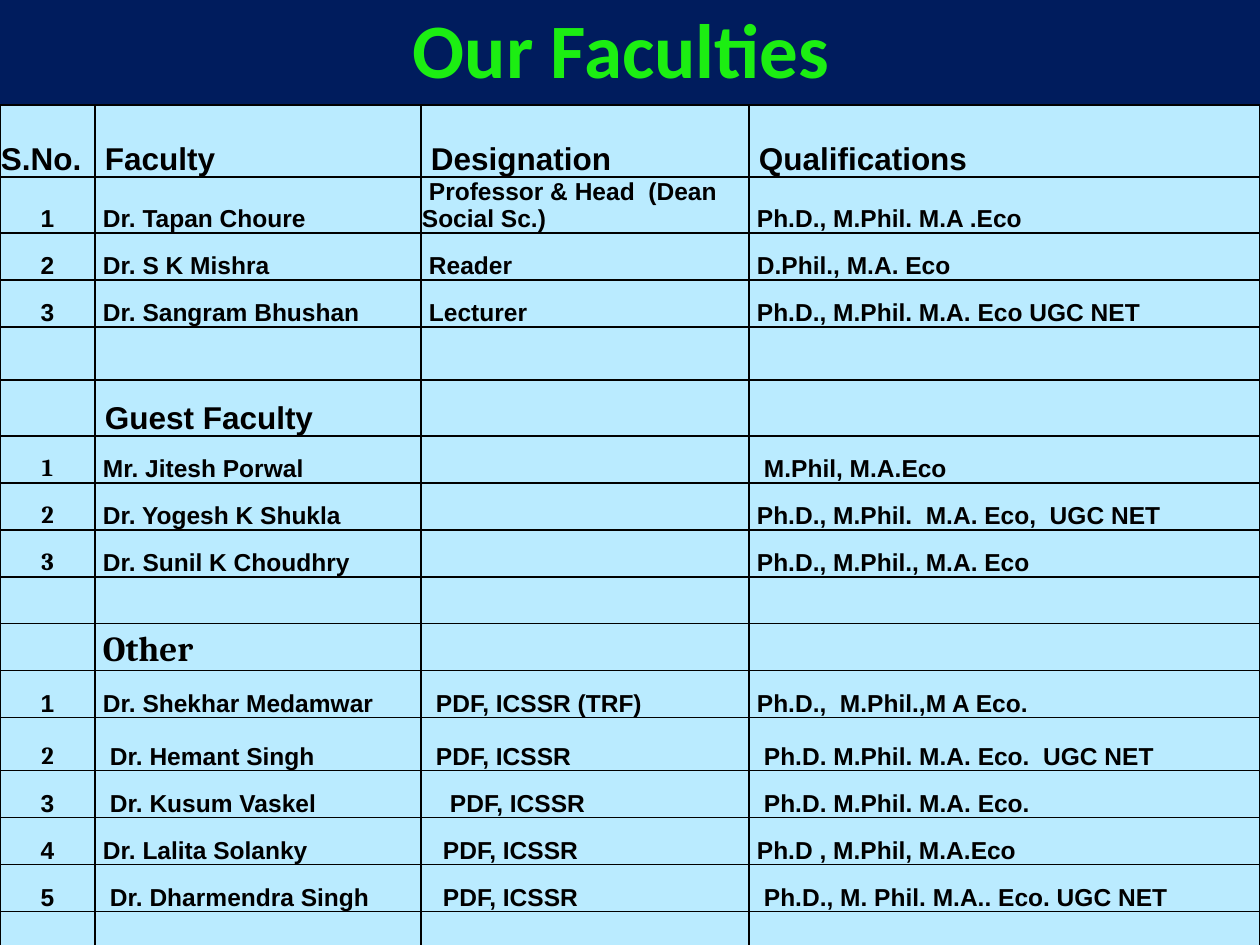
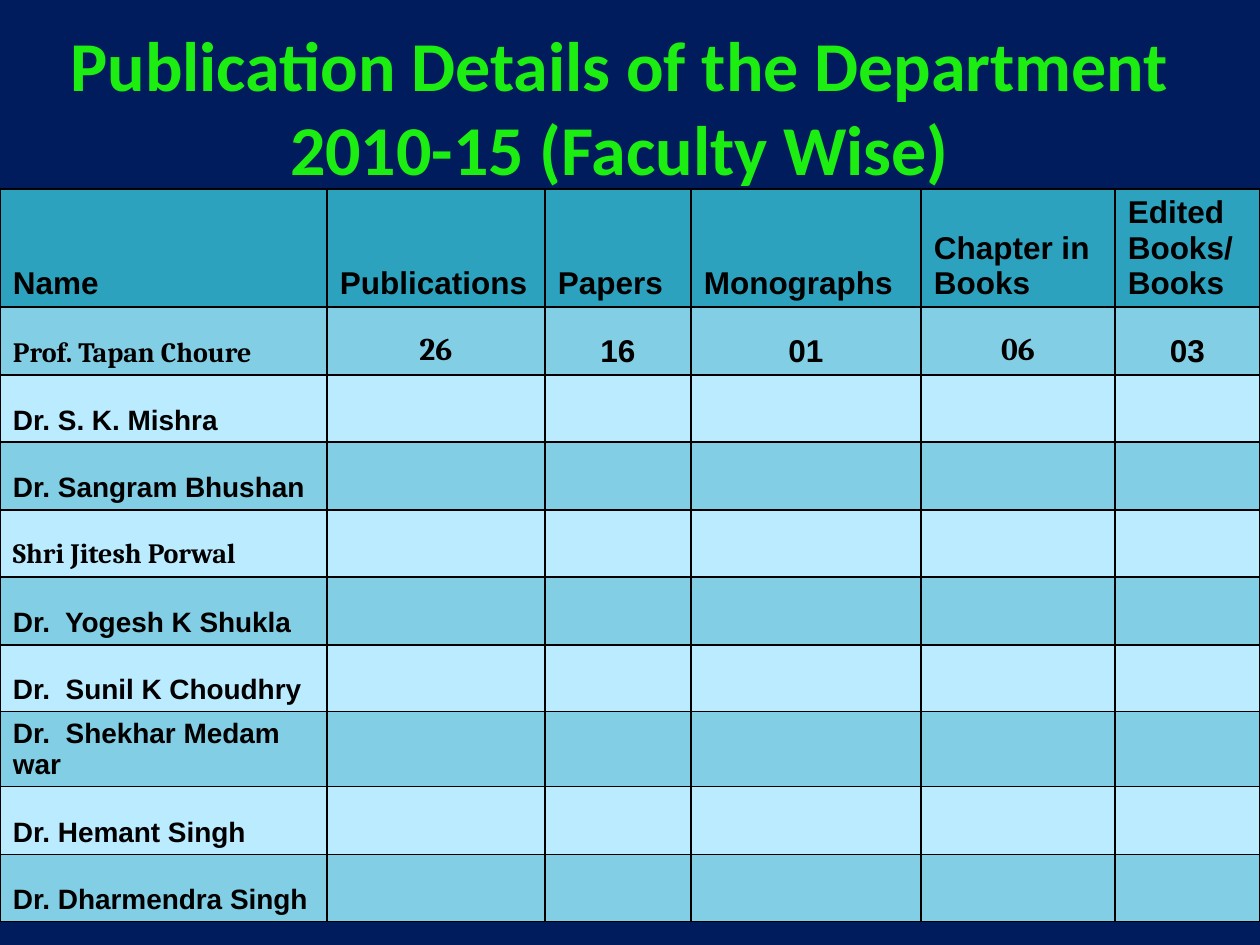
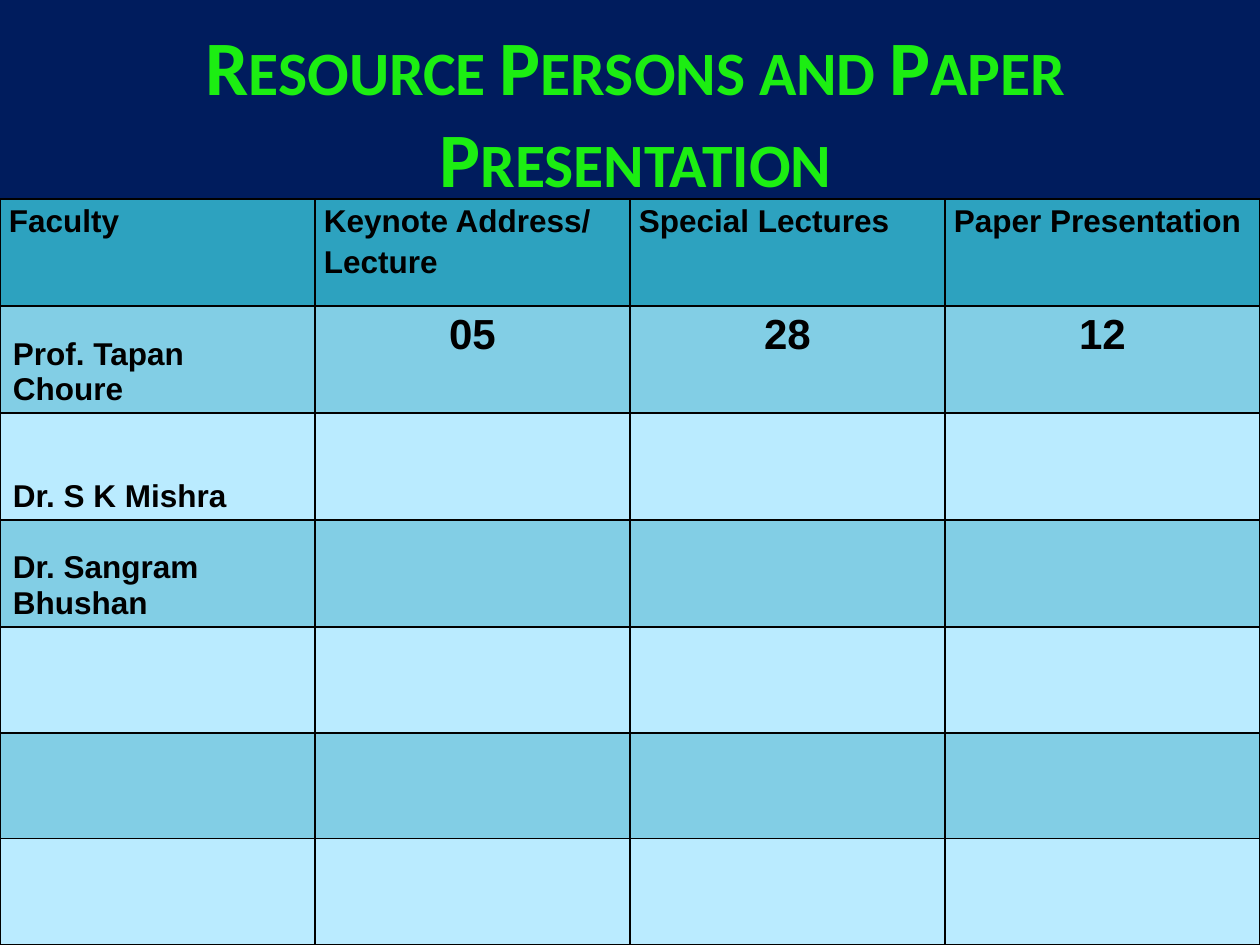
"""Build three slides of department tables: faculties, publications and presentations."""
from dataclasses import dataclass

from lxml import etree
from pptx import Presentation
from pptx import util as u
from pptx.dml.color import RGBColor
from pptx.enum import text
from pptx.oxml import ns

NAVY, GREEN, BLACK = "001C5D", "1CEE12", "000000"
HEADER, BAND, PALE = "2DA2BF", "82CEE5", "BAEBFF"
WIDTH, HEIGHT = 1260, 945


def px(length):
    return u.Emu(round(length * 914400 / 126))


def color(value):
    return RGBColor.from_string(value)


@dataclass
class Look:
    size: int
    font: str = "Arial"
    centred: bool = False
    bottom: bool = True
    indent: int = 0
    spacing: float = 1.0
    margins: tuple = (13, 6)


class Deck:
    def __init__(self):
        self.presentation = Presentation()
        self.presentation.slide_width = px(WIDTH)
        self.presentation.slide_height = px(HEIGHT)
        self.slide = None

    def add_slide(self):
        self.slide = self.presentation.slides.add_slide(self.presentation.slide_layouts[5])
        fill = self.slide.background.fill
        fill.solid()
        fill.fore_color.rgb = color(NAVY)

    def add_run(self, paragraph, words, size, font, tint):
        run = paragraph.add_run()
        run.text = words
        run.font.size = u.Pt(size)
        run.font.name = font
        run.font.bold = True
        run.font.color.rgb = color(tint)
        return run

    def title(self, words, left, top, width, height, size=44, small_caps=False):
        shape = self.slide.shapes.title
        shape.left, shape.top, shape.width, shape.height = map(px, (left, top, width, height))
        frame = shape.text_frame
        frame.word_wrap = True
        frame.auto_size = text.MSO_AUTO_SIZE.NONE
        frame.vertical_anchor = text.MSO_ANCHOR.MIDDLE
        paragraph = frame.paragraphs[0]
        paragraph.alignment = text.PP_ALIGN.CENTER
        run = self.add_run(paragraph, words, size, "Calibri", GREEN)
        if small_caps:
            run.font._element.set("cap", "small")

    def border(self, cell):
        properties = cell._tc.get_or_add_tcPr()
        for side in ("lnL", "lnR", "lnT", "lnB"):
            line = etree.SubElement(properties, ns.qn("a:" + side), w=str(u.Pt(1)))
            fill = etree.SubElement(line, ns.qn("a:solidFill"))
            etree.SubElement(fill, ns.qn("a:srgbClr"), val=BLACK)

    def fill_cell(self, cell, words, look, shade):
        self.border(cell)
        cell.fill.solid()
        cell.fill.fore_color.rgb = color(shade)
        side, edge = look.margins
        cell.margin_left = cell.margin_right = px(side)
        cell.margin_top = cell.margin_bottom = px(edge)
        cell.vertical_anchor = text.MSO_ANCHOR.BOTTOM if look.bottom else text.MSO_ANCHOR.TOP
        if not words:
            return
        paragraph = cell.text_frame.paragraphs[0]
        paragraph.alignment = text.PP_ALIGN.CENTER if look.centred else text.PP_ALIGN.LEFT
        paragraph.line_spacing = look.spacing
        if look.indent:
            paragraph._p.get_or_add_pPr().set("indent", str(px(look.indent)))
        self.add_run(paragraph, words, look.size, look.font, BLACK)

    def table(self, top, widths, heights, rows, look_at, banded=True):
        frame = self.slide.shapes.add_table(
            len(heights), len(widths), 0, px(top), px(sum(widths)), px(sum(heights)))
        table = frame.table
        table.first_row = table.horz_banding = False
        for column, width in zip(table.columns, widths):
            column.width = px(width)
        for row, height in enumerate(heights):
            table.rows[row].height = px(height)
            shade = PALE
            if banded:
                shade = HEADER if row == 0 else BAND if row % 2 else PALE
            words = rows[row] if row < len(rows) else ()
            for column in range(len(widths)):
                cell_words = words[column] if column < len(words) else ""
                self.fill_cell(table.cell(row, column), cell_words, look_at(row, column), shade)


FACULTIES = [
    ("S.No.", "Faculty", "Designation", "Qualifications"),
    ("1", "Dr. Tapan Choure", "Professor & Head  (Dean Social Sc.)", "Ph.D., M.Phil. M.A .Eco"),
    ("2", "Dr. S K Mishra", "Reader", "D.Phil., M.A. Eco"),
    ("3", "Dr. Sangram Bhushan", "Lecturer", "Ph.D., M.Phil. M.A. Eco UGC NET"),
    (),
    ("", "Guest Faculty"),
    ("1", "Mr. Jitesh Porwal", "", "M.Phil, M.A.Eco"),
    ("2", "Dr. Yogesh K Shukla", "", "Ph.D., M.Phil.  M.A. Eco,  UGC NET"),
    ("3", "Dr. Sunil K Choudhry", "", "Ph.D., M.Phil., M.A. Eco"),
    (),
    ("", "Other"),
    ("1", "Dr. Shekhar Medamwar", "PDF, ICSSR (TRF)", "Ph.D.,  M.Phil.,M A Eco."),
    ("2", "Dr. Hemant Singh", "PDF, ICSSR", "Ph.D. M.Phil. M.A. Eco.  UGC NET"),
    ("3", "Dr. Kusum Vaskel", "PDF, ICSSR", "Ph.D. M.Phil. M.A. Eco."),
    ("4", "Dr. Lalita Solanky", "PDF, ICSSR", "Ph.D , M.Phil, M.A.Eco"),
    ("5", "Dr. Dharmendra Singh", "PDF, ICSSR", "Ph.D., M. Phil. M.A.. Eco. UGC NET"),
]
FACULTY_SIZES = {0: 18, 5: 18, 10: 20}
FACULTY_SERIF = {(6, 0), (7, 0), (8, 0), (10, 1), (12, 0)}
FACULTY_STEPS = {
    (6, 3): 2, (11, 2): 2, (12, 1): 2, (12, 2): 2, (12, 3): 2, (13, 1): 2, (13, 2): 4,
    (13, 3): 2, (14, 2): 3, (15, 1): 2, (15, 2): 3, (15, 3): 2,
}

PUBLICATIONS = [
    ("Name", "Publications", "Papers", "Monographs", "Chapter in Books", "Edited Books/Books"),
    ("Prof. Tapan Choure", "26", "16", "01", "06", "03"),
    ("Dr. S. K. Mishra",),
    ("Dr. Sangram Bhushan",),
    ("Shri Jitesh Porwal",),
    ("Dr.  Yogesh K Shukla",),
    ("Dr.  Sunil K Choudhry",),
    ("Dr.  Shekhar Medam war",),
    ("Dr. Hemant Singh",),
    ("Dr. Dharmendra Singh",),
]
PUBLICATION_SERIF = {(1, 0), (1, 1), (1, 4), (4, 0)}

PRESENTATIONS = [
    ("Faculty", "Keynote Address/ Lecture", "Special Lectures", "Paper Presentation"),
    ("Prof. Tapan Choure", "05", "28", "12"),
    ("Dr. S K Mishra",),
    ("Dr. Sangram Bhushan",),
]


def font_for(place, serif):
    return "Cambria" if place in serif else "Arial"


def faculty_look(row, column):
    size = FACULTY_SIZES.get(row, 14)
    step = 9 if size == 18 else 7
    indent = step * FACULTY_STEPS.get((row, column), 1) if column else 0
    return Look(size, font_for((row, column), FACULTY_SERIF), centred=column == 0 and row > 0,
                indent=indent, margins=(1, 0))


def publication_look(row, column):
    size = 16 if row and column == 0 else 18
    return Look(size, font_for((row, column), PUBLICATION_SERIF), centred=row > 0 and column > 0)


def presentation_look(row, column):
    if row == 0:
        return Look(18, bottom=False, spacing=1.15, margins=(9, 0))
    if column == 0:
        return Look(18)
    return Look(24, centred=True, bottom=False)


def main():
    deck = Deck()

    deck.add_slide()
    deck.title("Our Faculties ", 0, 0, WIDTH, 95)
    heights = [72, 56, 47, 47, 53, 56] + [47] * 6 + [53] + [47] * 3 + [55]
    deck.table(105, [95, 326, 328, 511], heights, FACULTIES, faculty_look, banded=False)

    deck.add_slide()
    deck.title("Publication Details of the Department 2010-15 (Faculty Wise)",
               42, 32, 1155, 147, size=40)
    heights = [118] + [68, 67] * 3 + [75, 68, 67]
    deck.table(189, [327, 218, 146, 230, 194, 145], heights, PUBLICATIONS, publication_look)

    deck.add_slide()
    deck.title("Resource Persons and Paper Presentation", 32, 32, 1207, 158, small_caps=True)
    deck.table(199, [WIDTH // 4] * 4, [107] * 4 + [106] * 3, PRESENTATIONS, presentation_look)

    deck.presentation.save("out.pptx")


if __name__ == "__main__":
    main()
